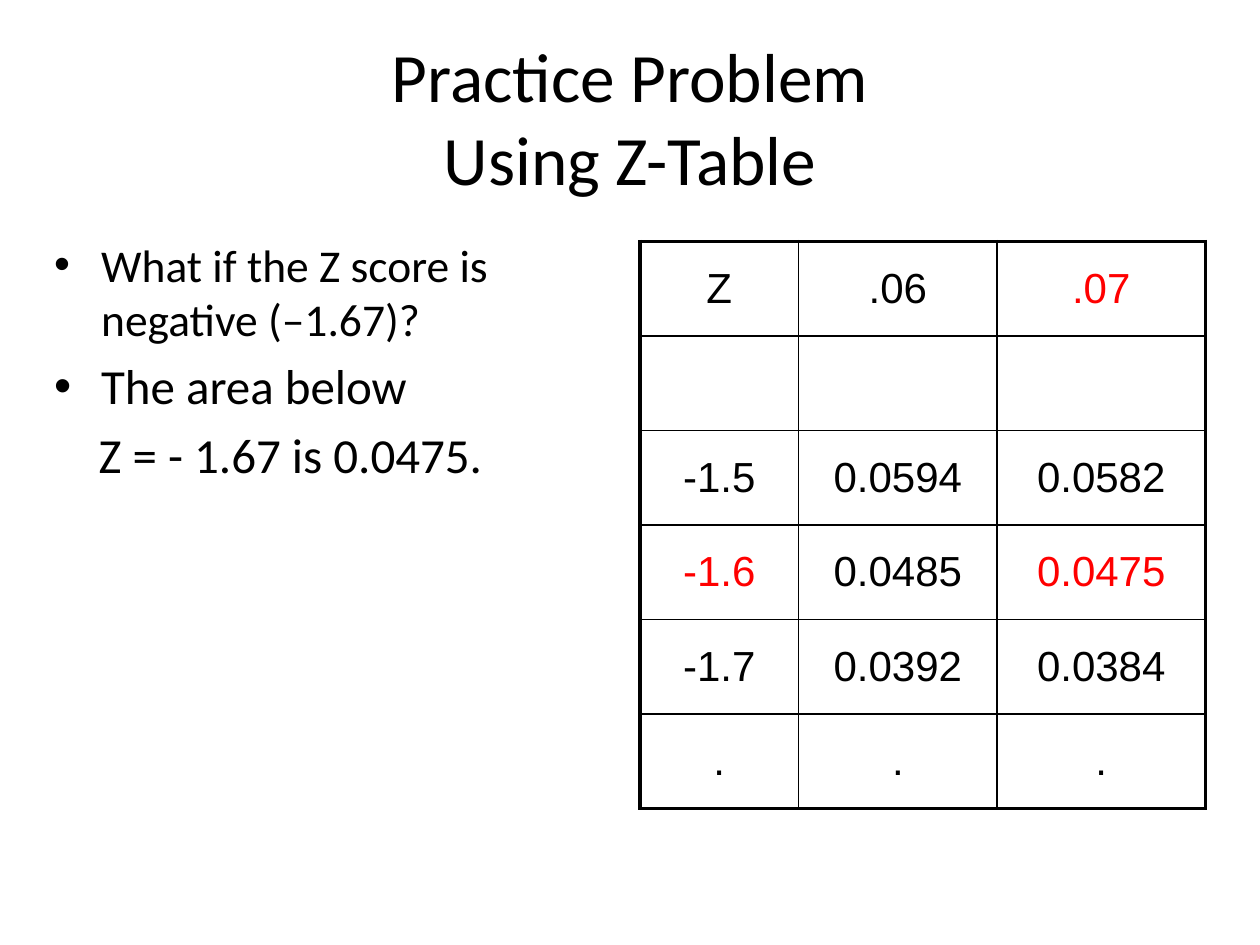
from lxml.etree import SubElement
from pptx import Presentation
from pptx.dml.color import RGBColor
from pptx.enum.text import MSO_ANCHOR as Anchor, PP_ALIGN as Align
from pptx.oxml.ns import qn
from pptx.util import Cm, Pt


def paint(font, name, size, color):
    font.name = name
    font.size = Pt(size)
    font.color.rgb = RGBColor.from_string(color)


def edge(cell, side, width):
    line = SubElement(cell._tc.get_or_add_tcPr(), qn("a:ln" + side), w=str(Pt(width)))
    fill = SubElement(line, qn("a:solidFill"))
    SubElement(fill, qn("a:srgbClr"), val="000000")


deck = Presentation()
deck.slide_width = Cm(25.4)
deck.slide_height = Cm(19.05)
slide = deck.slides.add_slide(deck.slide_layouts[6])

title = slide.shapes.add_textbox(Cm(1.27), Cm(0.76), Cm(22.86), Cm(3.18)).text_frame
title.word_wrap = True
title.vertical_anchor = Anchor.MIDDLE
head = title.paragraphs[0]
head.text = "Practice Problem\vUsing Z-Table"
head.alignment = Align.CENTER
for run in head.runs:
    paint(run.font, "Calibri", 39.6, "000000")

body = slide.shapes.add_textbox(Cm(0.84), Cm(4.65), Cm(11.86), Cm(13.84)).text_frame
body.word_wrap = True
body.text = "What if the Z score is negative (–1.67)?\nThe area below\nZ = - 1.67 is 0.0475."
looks = [(26, True), (28, True), (28, False)]
for para, (size, dot) in zip(body.paragraphs, looks):
    para.space_before = Pt(size * 0.2)
    paint(para.runs[0].font, "Calibri", size, "000000")
    props = para._p.get_or_add_pPr()
    if dot:
        props.set("marL", str(Cm(0.95)))
        props.set("indent", str(Cm(-0.95)))
        SubElement(props, qn("a:buFont"), typeface="Arial")
        SubElement(props, qn("a:buChar"), char="•")
    else:
        props.set("marL", "0")
        props.set("indent", str(Cm(0.9)))
        SubElement(props, qn("a:buNone"))

rows = [
    ("Z", ".06", ".07"),
    ("", "", ""),
    ("-1.5", "0.0594", "0.0582"),
    ("-1.6", "0.0485", "0.0475"),
    ("-1.7", "0.0392", "0.0384"),
    (".", ".", "."),
]
wide = [3.2, 4, 4.2]
reds = {".07", "-1.6", "0.0475"}
high = 1.905
frame = slide.shapes.add_table(len(rows), len(wide), Cm(12.9), Cm(4.87),
                               Cm(sum(wide)), Cm(high * len(rows)))
table = frame.table
table.first_row = False
table.horz_banding = False
for col, width in zip(table.columns, wide):
    col.width = Cm(width)

for r, row in enumerate(rows):
    table.rows[r].height = Cm(high)
    for c, text in enumerate(row):
        cell = table.cell(r, c)
        outer = {"L": c == 0, "R": c == len(wide) - 1,
                 "T": r == 0, "B": r == len(rows) - 1}
        for side, thick in outer.items():
            edge(cell, side, 2.25 if thick else 1)
        cell.fill.background()
        cell.vertical_anchor = Anchor.MIDDLE
        cell.text_frame.text = text
        para = cell.text_frame.paragraphs[0]
        para.alignment = Align.CENTER
        for run in para.runs:
            paint(run.font, "Arial", 24, "FF0000" if text in reds else "000000")

deck.save("out.pptx")
